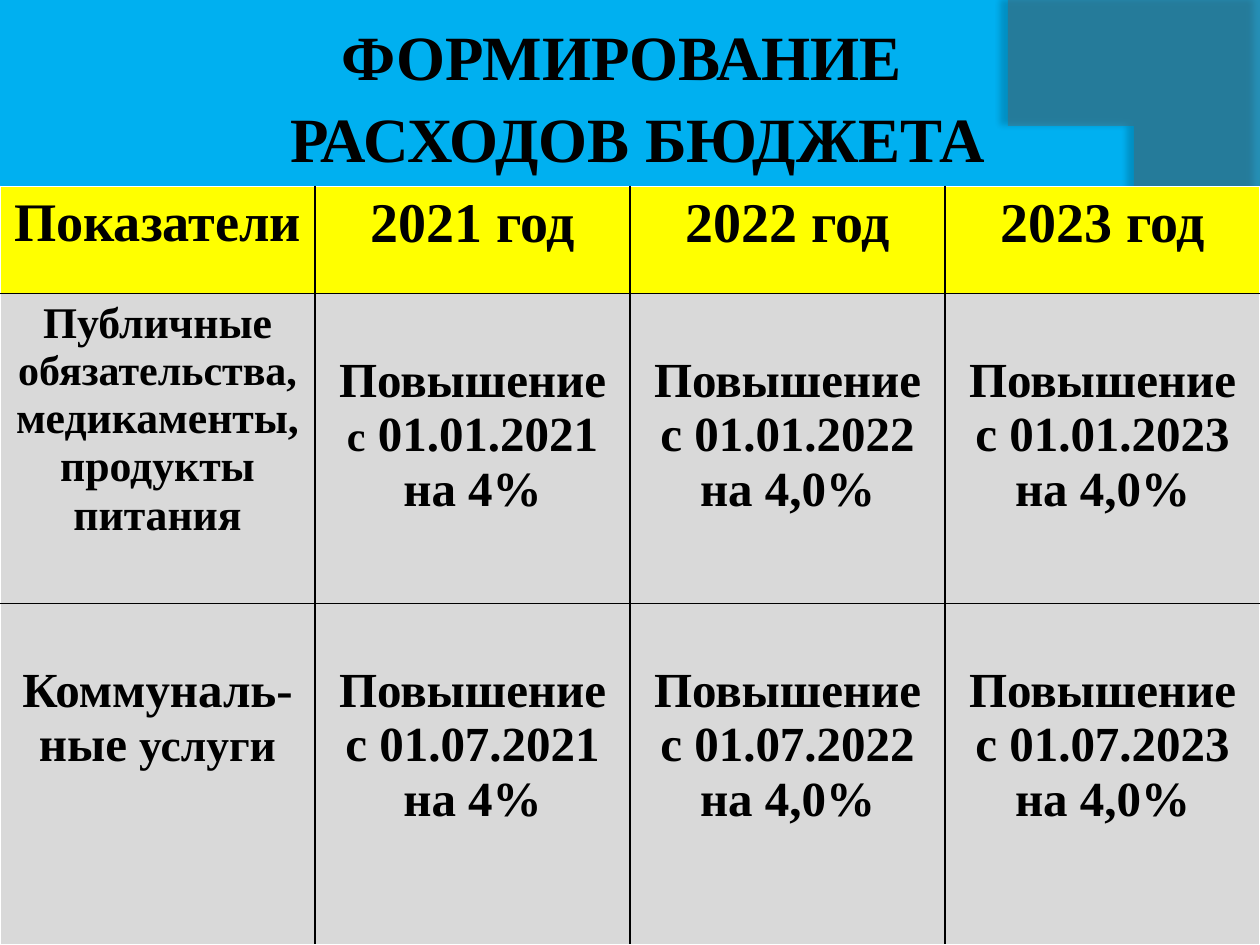
"""Build the slide on how budget expenses are formed, 2021 to 2023."""
import pptx
import pptx.dml.color
import pptx.enum.text
import pptx.oxml
import pptx.oxml.ns
import pptx.util
from pptx.util import Inches

FONT = "Times New Roman"
BLACK, WHITE, YELLOW, GREY = "000000", "FFFFFF", "FFFF00", "D9D9D9"
BACKGROUND, SWOOSH = "00B0F0", "5E5E5E"
TITLE = ["ФОРМИРОВАНИЕ ", " РАСХОДОВ БЮДЖЕТА"]
TOP_GAP, LOWERED_GAP = 0.05, 0.48
ROWS = [
    (0.85, YELLOW, [
        (TOP_GAP, [("Показатели", 31)]),
        (TOP_GAP, [("2021 год", 32)]),
        (TOP_GAP, [("2022 год", 32)]),
        (TOP_GAP, [("2023 год", 32)]),
    ]),
    (2.46, GREY, [
        (TOP_GAP, [("Публичные ", 25), ("обязательства, ", 24),
                   ("медикаменты, продукты питания", 25)]),
        (LOWERED_GAP, [("Повышение ", 28), ("с", 24), (" 01.01.2021 на 4%", 28)]),
        (LOWERED_GAP, [("Повышение с 01.01.2022 на 4,0%", 28)]),
        (LOWERED_GAP, [("Повышение с 01.01.2023 на 4,0%", 28)]),
    ]),
    (2.71, GREY, [
        (LOWERED_GAP, [("Коммуналь-ные ", 28), ("услуги", 26)]),
        (LOWERED_GAP, [("Повышение с 01.07.2021 на 4%", 28)]),
        (LOWERED_GAP, [("Повышение с 01.07.2022 на 4,0%", 28)]),
        (LOWERED_GAP, [("Повышение с 01.07.2023 на 4,0%", 28)]),
    ]),
]
CURVE = [(8.21, 7.5), (9.35, 6.19), (10.18, 3), (8, 0)]
CURVE_STEPS = 40


def color(value):
    return pptx.dml.color.RGBColor.from_string(value)


def fill_solid(target, value):
    target.fill.solid()
    target.fill.fore_color.rgb = color(value)


def xml(tag, body):
    namespace = pptx.oxml.ns.nsdecls("a")
    return pptx.oxml.parse_xml(f"<a:{tag} {namespace}>{body}</a:{tag}>")


def add_span(para, text, size):
    span = para.add_run()
    span.text = text
    span.font.name = FONT
    span.font.size = pptx.util.Pt(size)
    span.font.bold = True
    span.font.color.rgb = color(BLACK)


def bezier(points, t):
    weights = ((1 - t) ** 3, 3 * t * (1 - t) ** 2, 3 * t * t * (1 - t), t ** 3)
    return tuple(sum(w * p[axis] for w, p in zip(weights, points)) for axis in (0, 1))


def add_swoosh(slide):
    curve = [bezier(CURVE, step / CURVE_STEPS) for step in range(CURVE_STEPS + 1)]
    builder = slide.shapes.build_freeform(10, 0.02, scale=Inches(1))
    builder.add_line_segments([(10, 7.5)] + curve, close=True)
    shape = builder.convert_to_shape()
    shape.line.fill.background()
    fill_solid(shape, SWOOSH)
    properties = shape.element.spPr
    fill_color = properties.find(".//" + pptx.oxml.ns.qn("a:srgbClr"))
    fill_color.append(pptx.oxml.parse_xml(
        f'<a:alpha {pptx.oxml.ns.nsdecls("a")} val="40000"/>'))
    blur = pptx.util.Pt(4)
    properties.append(xml(
        "effectLst",
        f'<a:outerShdw blurRad="{blur}" dist="{blur}" dir="10800000" algn="ctr" '
        f'rotWithShape="0"><a:srgbClr val="{BLACK}"><a:alpha val="45000"/>'
        "</a:srgbClr></a:outerShdw>"))


def set_borders(cell, colors):
    properties = cell._tc.get_or_add_tcPr()
    for position, (tag, value) in enumerate(colors.items()):
        line = xml(tag, f'<a:solidFill><a:srgbClr val="{value}"/></a:solidFill>')
        line.set("w", str(pptx.util.Pt(1)))
        properties.insert(position, line)


def add_table(slide):
    columns = len(ROWS[0][2])
    height = sum(row[0] for row in ROWS)
    frame = slide.shapes.add_table(
        len(ROWS), columns, 0, Inches(1.48), Inches(10), Inches(height))
    table = frame.table
    for r, (row_height, fill, cells) in enumerate(ROWS):
        table.rows[r].height = Inches(row_height)
        for c, (gap, spans) in enumerate(cells):
            cell = table.cell(r, c)
            cell.margin_top = Inches(gap)
            fill_solid(cell, fill)
            para = cell.text_frame.paragraphs[0]
            para.alignment = pptx.enum.text.PP_ALIGN.CENTER
            for text, size in spans:
                add_span(para, text, size)
            set_borders(cell, {
                "lnL": BLACK if c else WHITE,
                "lnR": BLACK if c < columns - 1 else WHITE,
                "lnT": BLACK if r else WHITE,
                "lnB": BLACK if r < len(ROWS) - 1 else WHITE,
            })


def add_title(slide):
    box = slide.shapes.add_textbox(Inches(0.5), 0, Inches(9), Inches(1.48))
    frame = box.text_frame
    frame.word_wrap = True
    frame.vertical_anchor = pptx.enum.text.MSO_ANCHOR.MIDDLE
    frame.margin_left = frame.margin_right = Inches(0.05)
    frame.margin_top = frame.margin_bottom = Inches(0.05)
    para = frame.paragraphs[0]
    para.alignment = pptx.enum.text.PP_ALIGN.CENTER
    para.line_spacing = 1.08
    for index, text in enumerate(TITLE):
        if index:
            para.add_line_break()
        add_span(para, text, 36)


def main():
    deck = pptx.Presentation()
    deck.slide_width, deck.slide_height = Inches(10), Inches(7.5)
    slide = deck.slides.add_slide(deck.slide_layouts[6])
    fill_solid(slide.background, BACKGROUND)
    add_swoosh(slide)
    add_table(slide)
    add_title(slide)
    deck.save("out.pptx")


if __name__ == "__main__":
    main()
